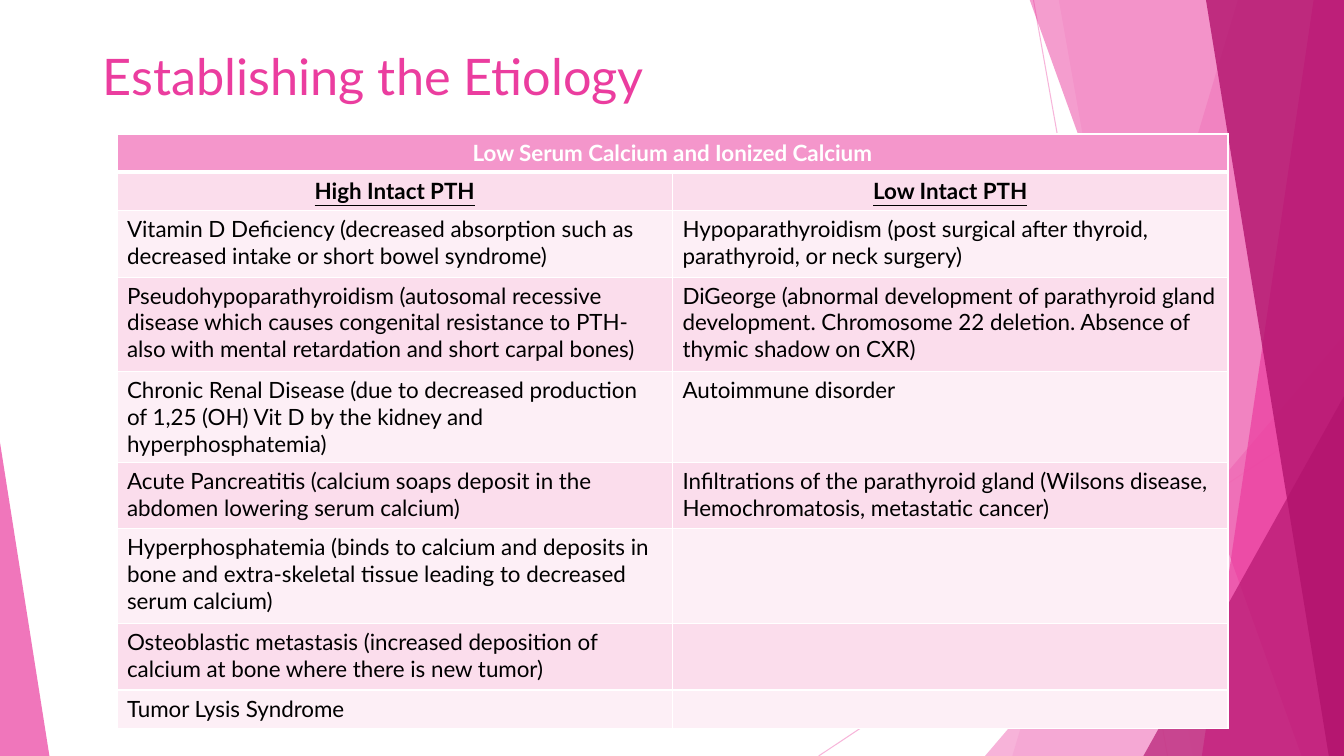
from lxml.etree import SubElement
from pptx import Presentation
from pptx.dml.color import RGBColor
from pptx.enum.shapes import MSO_CONNECTOR, MSO_SHAPE
from pptx.enum.text import MSO_ANCHOR, PP_ALIGN
from pptx.oxml import parse_xml
from pptx.oxml.ns import nsdecls, qn
from pptx.util import Inches, Pt

FONT = "Lato"
LIGHT, PINK, DEEP = "F496CB", "EB3D9F", "B2136D"
WHITE, BLACK = "FFFFFF", "000000"
BANDS = ["FBDDEC", "FDEFF6"]
WIDE, HIGH, TOP = 13.33, 7.5, -0.01

LINES = [(10.25, 0, 11.58, 7.5), (13.33, 4.03, 8.12, 7.5)]

# Panels reach the right edge: top x, bottom x, colour, opacity
BACK = [(12.28, 10.04, LIGHT, 36), (10.5, 11.83, LIGHT, 20)]
FRONT = [
    (10.21, 12.91, PINK, 50),
    (13.03, 11.92, PINK, 70),
    (11.96, 13.18, DEEP, 80),
]

HEAD = "Low Serum Calcium and Ionized Calcium"
ROWS = [
    ("High Intact PTH", "Low Intact PTH"),
    ("Vitamin D Deficiency (decreased absorption such as decreased intake or short bowel syndrome)",
     "Hypoparathyroidism (post surgical after thyroid, parathyroid, or neck surgery)"),
    ("Pseudohypoparathyroidism (autosomal recessive disease which causes congenital resistance "
     "to PTH- also with mental retardation and short carpal bones)",
     "DiGeorge (abnormal development of parathyroid gland development. Chromosome 22 deletion. "
     "Absence of thymic shadow on CXR)"),
    ("Chronic Renal Disease (due to decreased production of 1,25 (OH) Vit D by the kidney and "
     "hyperphosphatemia)",
     "Autoimmune disorder"),
    ("Acute Pancreatitis (calcium soaps deposit in the abdomen lowering serum calcium)",
     "Infiltrations of the parathyroid gland (Wilsons disease, Hemochromatosis, metastatic cancer)"),
    ("Hyperphosphatemia (binds to calcium and deposits in bone and extra-skeletal tissue leading "
     "to decreased serum calcium)", ""),
    ("Osteoblastic metastasis (increased deposition of calcium at bone where there is new tumor)", ""),
    ("Tumor Lysis Syndrome", ""),
]
TALL = [0.38, 0.38, 0.66, 0.94, 0.66, 0.66, 0.94, 0.66, 0.38]


def paint(fill, color, alpha=100):
    fill.solid()
    fill.fore_color.rgb = RGBColor.from_string(color)
    if alpha < 100:
        for node in fill._xPr.iter(qn("a:srgbClr")):
            SubElement(node, qn("a:alpha"), val=str(alpha * 1000))


def style(para, size, color, bold=False, under=False):
    for run in para.runs:
        font = run.font
        font.name, font.size = FONT, Pt(size)
        font.bold, font.underline = bold, under
        font.color.rgb = RGBColor.from_string(color)


def finish(shape, color, alpha):
    paint(shape.fill, color, alpha)
    shape.line.fill.background()
    shape.shadow.inherit = False


def add_line(slide, ends):
    line = slide.shapes.add_connector(MSO_CONNECTOR.STRAIGHT, *map(Inches, ends))
    line.line.width = Pt(0.75)
    paint(line.line.fill, LIGHT, 70)
    SubElement(line._element.spPr, qn("a:effectLst"))


def add_panel(slide, upper, lower, color, alpha):
    path = slide.shapes.build_freeform(Inches(upper), Inches(TOP))
    points = [(WIDE, TOP), (WIDE, HIGH), (lower, HIGH)]
    path.add_line_segments([(Inches(x), Inches(y)) for x, y in points])
    finish(path.convert_to_shape(), color, alpha)


def add_wedge(slide, box, apex, color, alpha):
    wedge = slide.shapes.add_shape(MSO_SHAPE.ISOSCELES_TRIANGLE, *map(Inches, box))
    wedge.adjustments[0] = apex
    finish(wedge, color, alpha)


def add_title(slide, text):
    title = slide.shapes.title
    title.left, title.top = Inches(0.92), Inches(0.4)
    title.width, title.height = Inches(11.5), Inches(0.7)
    frame = title.text_frame
    frame.text = text
    frame.vertical_anchor = MSO_ANCHOR.MIDDLE
    frame.paragraphs[0].alignment = PP_ALIGN.LEFT
    style(frame.paragraphs[0], 36, PINK)
    # Bring the title in front of the panels
    slide.shapes._spTree.append(title._element)


def edge(cell, widths):
    props = cell._tc.get_or_add_tcPr()
    for spot, (side, width) in enumerate(zip("LRTB", widths)):
        props.insert(spot, parse_xml(
            f'<a:ln{side} {nsdecls("a")} w="{Pt(width)}"><a:solidFill>'
            f'<a:srgbClr val="{WHITE}"/></a:solidFill></a:ln{side}>'))


def fill_cell(cell, text, row):
    cell.text = text
    para = cell.text_frame.paragraphs[0]
    para.alignment = PP_ALIGN.CENTER if row < 2 else PP_ALIGN.LEFT
    style(para, 16, BLACK if row else WHITE, bold=row < 2, under=row == 1)
    if not text:
        para._p.get_or_add_endParaRPr().set("sz", "1600")
    paint(cell.fill, BANDS[(row - 1) % 2] if row else LIGHT)
    edge(cell, (1, 1, 3 if row == 1 else 1, 1 if row else 3))


def add_grid(slide):
    box = map(Inches, (1.16, 1.33, 11.02, sum(TALL)))
    table = slide.shapes.add_table(len(TALL), 2, *box).table
    for row, tall in zip(table.rows, TALL):
        row.height = Inches(tall)
    table.cell(0, 0).merge(table.cell(0, 1))
    for row, texts in enumerate([(HEAD, "")] + ROWS):
        for col, text in enumerate(texts):
            fill_cell(table.cell(row, col), text, row)


def main():
    deck = Presentation()
    deck.slide_width, deck.slide_height = Inches(WIDE), Inches(HIGH)
    slide = deck.slides.add_slide(deck.slide_layouts[5])

    # Background facets, from back to front
    for ends in LINES:
        add_line(slide, ends)
    for panel in BACK:
        add_panel(slide, *panel)
    add_wedge(slide, (9.77, 3.33, 3.56, 4.17), 1, LIGHT, 72)
    for panel in FRONT:
        add_panel(slide, *panel)
    add_wedge(slide, (11.34, 3.93, 1.99, 3.57), 1, DEEP, 66)
    add_wedge(slide, (0, 4.39, 0.49, 3.11), 0, PINK, 70)

    # Content
    add_title(slide, "Establishing the Etiology")
    add_grid(slide)
    deck.save("out.pptx")


if __name__ == "__main__":
    main()
